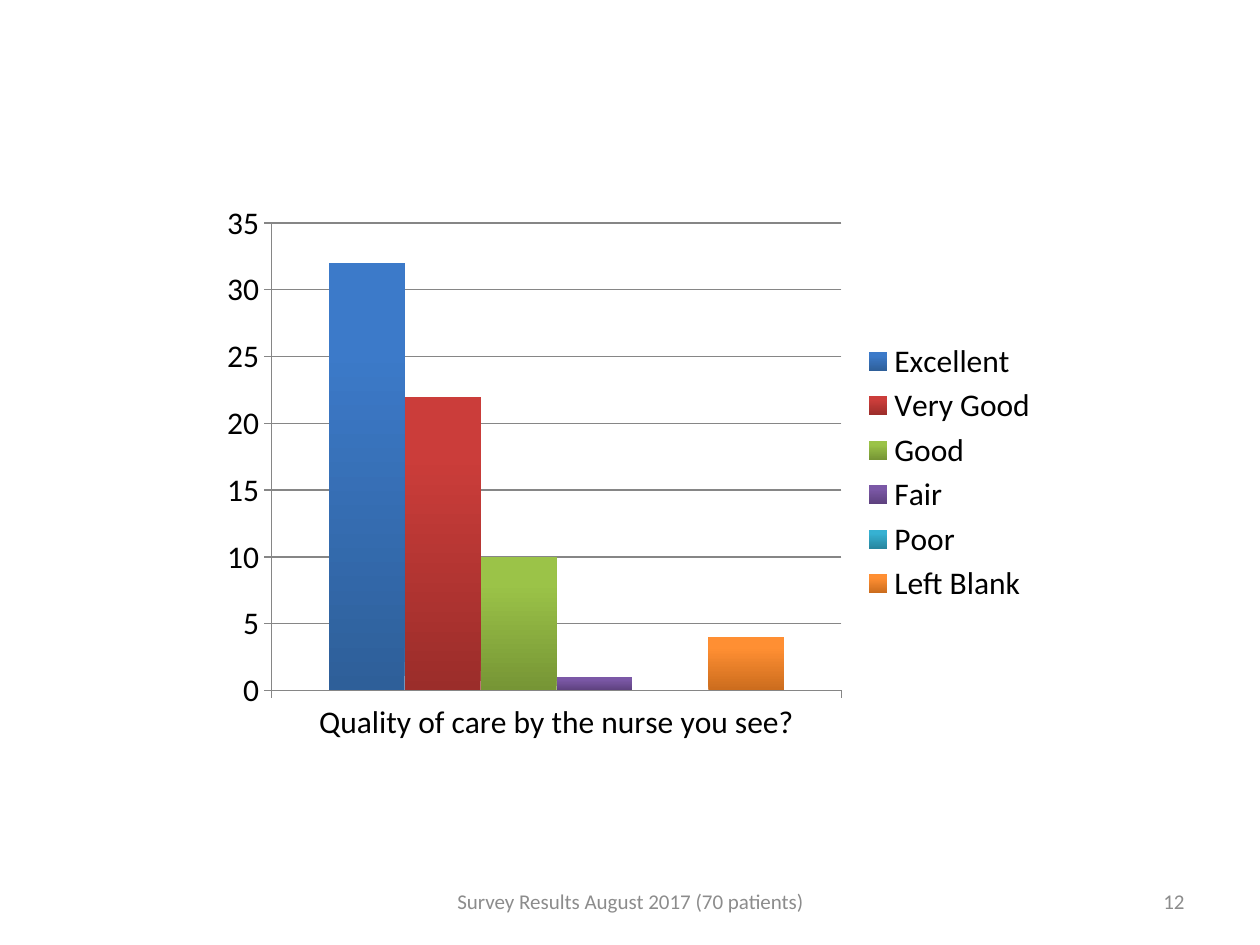
from pptx import Presentation
from pptx.chart.data import CategoryChartData
from pptx.dml.color import RGBColor
from pptx.enum.chart import XL_CHART_TYPE, XL_LEGEND_POSITION, XL_TICK_MARK
from pptx.enum.text import MSO_ANCHOR, PP_ALIGN
from pptx.util import Inches, Pt

COLUMN = XL_CHART_TYPE.COLUMN_CLUSTERED
RIGHT_SIDE = XL_LEGEND_POSITION.RIGHT
OUT = XL_TICK_MARK.OUTSIDE
NONE = XL_TICK_MARK.NONE
MIDDLE = MSO_ANCHOR.MIDDLE
CENTER = PP_ALIGN.CENTER
RIGHT = PP_ALIGN.RIGHT

FONT = "Calibri"
GRAY = "8C8C8C"
LINE = "868686"
QUESTION = "Quality of care by the nurse you see?"
RATINGS = [
    ("Excellent", 32, "3C7AC9", "2E5F99"),
    ("Very Good", 22, "CB3D3A", "9B2D2A"),
    ("Good", 10, "9BC348", "769535"),
    ("Fair", 1, "7B58A6", "5D417E"),
    ("Poor", 0, "36B1D2", "27869F"),
    ("Left Blank", 4, "FF8F33", "CB6C1D"),
]
FOOTER = [
    ("12", 7.17, 2.33, RIGHT),
    ("Survey Results August 2017 (70 patients)", 3.42, 3.17, CENTER),
]


def color(code):
    return RGBColor.from_string(code)


def style(font, size, code):
    font.name = FONT
    font.size = Pt(size)
    font.color.rgb = color(code)


def rule(line):
    line.color.rgb = color(LINE)
    line.width = Pt(0.75)


def shade(fill, top, base):
    fill.gradient()
    fill.gradient_angle = 90
    low, high = fill.gradient_stops
    low.color.rgb = color(base)
    low.position = 0
    high.color.rgb = color(top)
    high.position = 0.8


def add_ratings(slide):
    data = CategoryChartData()
    data.categories = [QUESTION]
    for name, count, _, _ in RATINGS:
        data.add_series(name, [count])
    box = [Inches(n) for n in (1.67, 1.53, 6.67, 4.44)]
    chart = slide.shapes.add_chart(COLUMN, *box, data).chart
    style(chart.font, 18, "000000")
    chart.has_title = False
    chart.has_legend = True
    chart.legend.position = RIGHT_SIDE
    chart.legend.include_in_layout = False

    for axis in (chart.category_axis, chart.value_axis):
        axis.major_tick_mark = OUT
        axis.minor_tick_mark = NONE
        rule(axis.format.line)
    scale = chart.value_axis
    scale.minimum_scale, scale.maximum_scale, scale.major_unit = 0, 35, 5
    scale.has_major_gridlines = True
    rule(scale.major_gridlines.format.line)

    plot = chart.plots[0]
    plot.gap_width = 150
    plot.overlap = 0
    plot.vary_by_categories = False
    for bar, (_, _, top, base) in zip(plot.series, RATINGS):
        bar.invert_if_negative = False
        shade(bar.format.fill, top, base)


def add_footer(slide, text, left, width, align):
    box = slide.shapes.add_textbox(
        Inches(left), Inches(6.95), Inches(width), Inches(0.4))
    frame = box.text_frame
    frame.word_wrap = True
    frame.vertical_anchor = MIDDLE
    frame.text = text
    line = frame.paragraphs[0]
    line.alignment = align
    style(line.runs[0].font, 12, GRAY)


def main():
    deck = Presentation()
    deck.slide_width, deck.slide_height = Inches(10), Inches(7.5)
    slide = deck.slides.add_slide(deck.slide_layouts[6])
    add_ratings(slide)
    for item in FOOTER:
        add_footer(slide, *item)
    deck.save("out.pptx")


if __name__ == "__main__":
    main()
